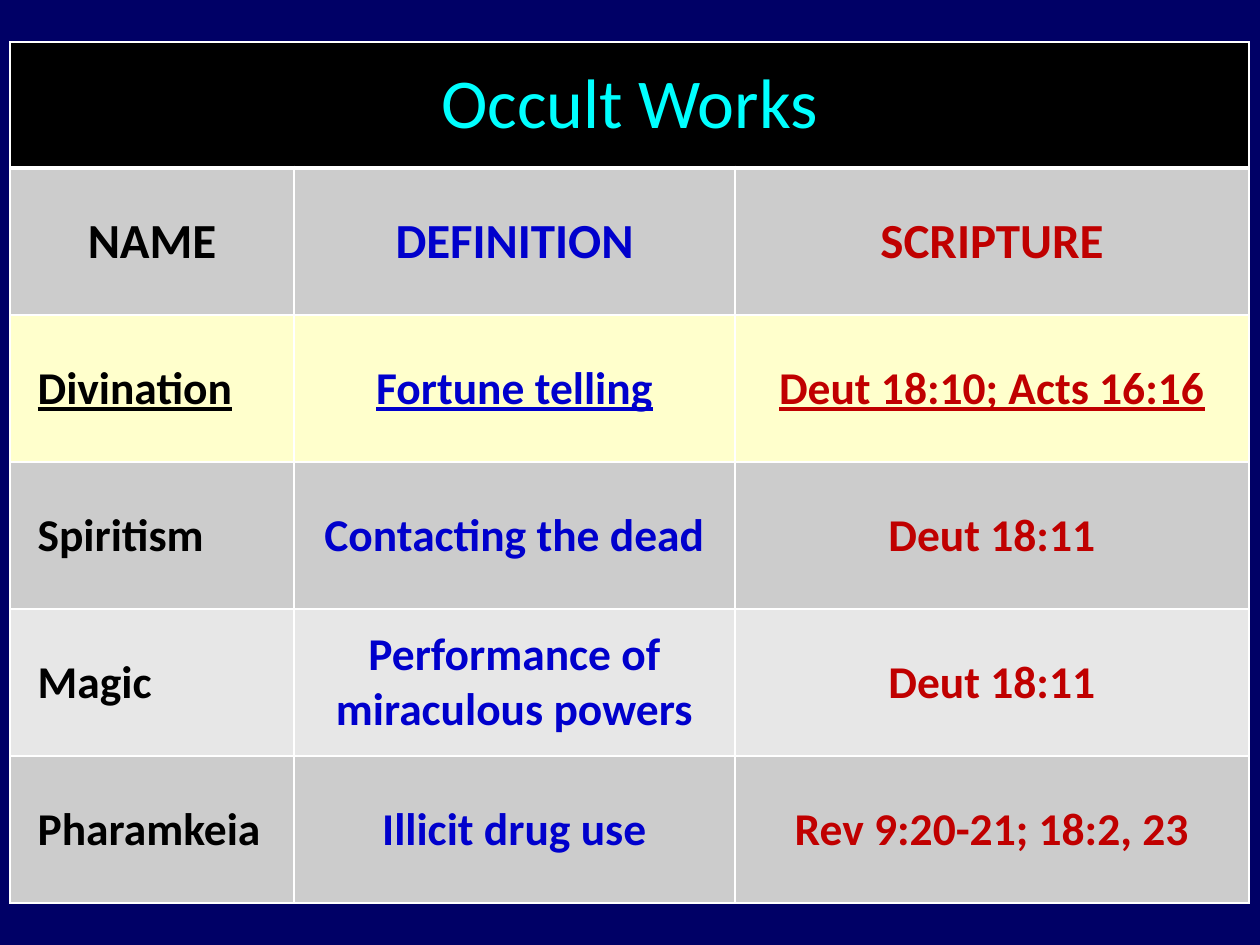
from lxml import etree
from pptx import Presentation
from pptx.dml.color import RGBColor
from pptx.enum.text import MSO_ANCHOR, PP_ALIGN
from pptx.oxml.ns import qn
from pptx.util import Emu, Pt

CENTER, LEFT = PP_ALIGN.CENTER, PP_ALIGN.LEFT
MIDDLE = MSO_ANCHOR.MIDDLE

NAVY = RGBColor(0x00, 0x00, 0x66)
BLACK = RGBColor(0x00, 0x00, 0x00)
WHITE = RGBColor(0xFF, 0xFF, 0xFF)
CYAN = RGBColor(0x00, 0xFF, 0xFF)
BLUE = RGBColor(0x00, 0x00, 0xCC)
RED = RGBColor(0xC0, 0x00, 0x00)
GRAY = RGBColor(0xCC, 0xCC, 0xCC)
PALE_GRAY = RGBColor(0xE7, 0xE7, 0xE7)
YELLOW = RGBColor(0xFF, 0xFF, 0xCC)

PX_PER_INCH = 126
FONT = "Calibri"
TITLE = "Occult Works"
HEADINGS = ("NAME", "DEFINITION", "SCRIPTURE")
WORKS = (
    ("Divination", "Fortune telling", "Deut 18:10; Acts 16:16"),
    ("Spiritism", "Contacting the dead", "Deut 18:11"),
    ("Magic", "Performance of miraculous powers", "Deut 18:11"),
    ("Pharamkeia", "Illicit drug use", "Rev 9:20-21; 18:2, 23"),
)
HIGHLIGHTED = "Divination"
COLUMN_COLORS = (BLACK, BLUE, RED)
COLUMN_WIDTHS = (284, 441, 514)
TITLE_HEIGHT, ROW_HEIGHT = 126, 147
NAME_INDENT = 15


def px(length):
    return Emu(round(length * 914400 / PX_PER_INCH))


def write(cell, text, *, size, color, bold=False, underline=False,
          align=CENTER, indent=0):
    cell.vertical_anchor = MIDDLE
    paragraph = cell.text_frame.paragraphs[0]
    paragraph.alignment = align
    if indent:
        properties = paragraph._p.get_or_add_pPr()
        properties.set("marL", str(px(indent)))
        properties.set("indent", "0")
    run = paragraph.add_run()
    run.text = text
    run.font.name = FONT
    run.font.size = Pt(size)
    run.font.bold = bold
    run.font.underline = underline
    run.font.color.rgb = color


def paint(cell, fill, *, top=1, bottom=1):
    """Fill a cell and rule its four sides in white, widths in points."""
    cell.fill.solid()
    cell.fill.fore_color.rgb = fill
    properties = cell._tc.get_or_add_tcPr()
    sides = (("lnL", 1), ("lnR", 1), ("lnT", top), ("lnB", bottom))
    for position, (side, width) in enumerate(sides):
        line = etree.Element(qn(f"a:{side}"), w=str(Pt(width)))
        solid = etree.SubElement(line, qn("a:solidFill"))
        etree.SubElement(solid, qn("a:srgbClr"), val=str(WHITE))
        properties.insert(position, line)


def add_works_table(slide, left, top, width, height):
    rows = (HEADINGS, *WORKS)
    table = slide.shapes.add_table(
        len(rows) + 1, len(HEADINGS),
        px(left), px(top), px(width), px(height)).table
    for column, column_width in zip(table.columns, COLUMN_WIDTHS):
        column.width = px(column_width)
    for index, row in enumerate(table.rows):
        row.height = px(ROW_HEIGHT if index else TITLE_HEIGHT)

    title = table.cell(0, 0)
    title.merge(table.cell(0, len(HEADINGS) - 1))
    write(title, TITLE, size=40, color=CYAN)
    for cell in table.rows[0].cells:
        paint(cell, BLACK, bottom=3)

    for r, texts in enumerate(rows, start=1):
        heading = r == 1
        highlighted = texts[0] == HIGHLIGHTED
        fill = YELLOW if highlighted else GRAY if r % 2 else PALE_GRAY
        for c, (text, color) in enumerate(zip(texts, COLUMN_COLORS)):
            cell = table.cell(r, c)
            name = c == 0 and not heading
            write(cell, text, size=28 if heading else 26, color=color,
                  bold=True, underline=highlighted,
                  align=LEFT if name else CENTER,
                  indent=NAME_INDENT if name else 0)
            paint(cell, fill, top=3 if heading else 1)


def main():
    deck = Presentation()
    deck.slide_width, deck.slide_height = px(1260), px(945)
    slide = deck.slides.add_slide(deck.slide_layouts[6])
    slide.background.fill.solid()
    slide.background.fill.fore_color.rgb = NAVY
    add_works_table(slide, 10, 42, sum(COLUMN_WIDTHS),
                    TITLE_HEIGHT + ROW_HEIGHT * (len(WORKS) + 1))
    deck.save("out.pptx")


if __name__ == "__main__":
    main()
